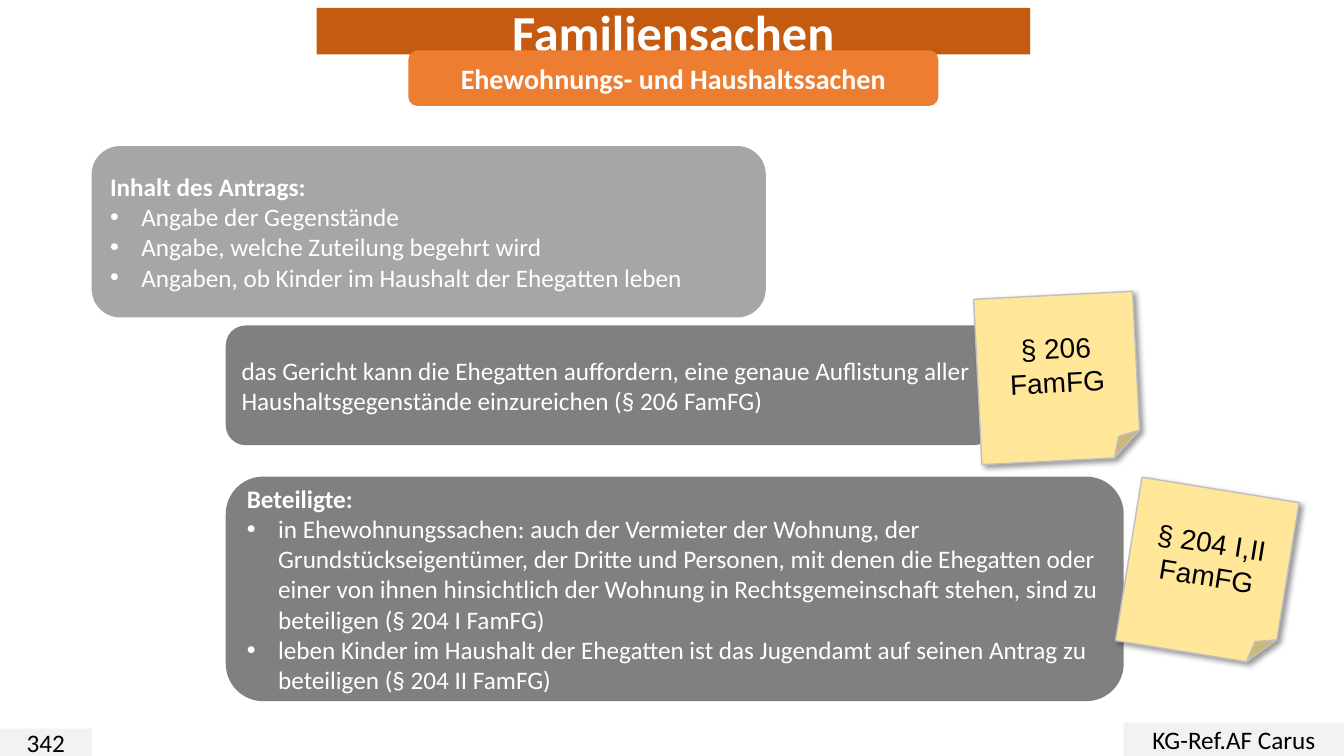
"""Build the slide on matters of the marital home and household."""
from dataclasses import dataclass
from typing import Optional

from lxml.etree import SubElement as Sub
from pptx import Presentation
from pptx.dml.color import RGBColor as Rgb
from pptx.dml.fill import FillFormat as Fill
from pptx.enum.shapes import MSO_SHAPE as Form
from pptx.enum.text import MSO_ANCHOR as Anchor, MSO_AUTO_SIZE as Auto, PP_ALIGN as Align
from pptx.oxml import parse_xml as to_xml
from pptx.oxml.ns import nsdecls, qn
from pptx.shapes.autoshape import Shape
from pptx.slide import Slide
from pptx.text.text import _Paragraph as Para
from pptx.util import Cm, Pt

WHITE, BLACK = "FFFFFF", "000000"
INDENT = Cm(0.79)


@dataclass
class Card:
    x: float
    y: float
    w: float
    h: float
    fill: str
    lines: tuple[str, ...]
    size: int = 18
    ink: str = WHITE
    bold: bool = False
    align: Align = Align.CENTER
    form: Form = Form.ROUNDED_RECTANGLE
    slot: Optional[int] = None


@dataclass
class Note:
    x: float
    y: float
    turn: float
    law: str


CARDS = (
    Card(7.98, 0.2, 17.98, 1.17, "C55A11", ("Familiensachen",), 36, bold=True, slot=0),
    Card(0, 18.36, 2.31, 0.69, "F2F2F2", ("342",), ink=BLACK, form=Form.RECTANGLE),
    Card(28.32, 18.21, 5.55, 0.84, "F2F2F2", ("KG-Ref.AF Carus",), ink=BLACK, form=Form.RECTANGLE),
    Card(10.29, 1.27, 13.36, 1.4, "ED7D31", ("Ehewohnungs- und Haushaltssachen",), 20, bold=True),
    Card(2.31, 3.68, 16.99, 4.32, "A6A6A6", (
        "Inhalt des Antrags:",
        "Angabe der Gegenstände",
        "Angabe, welche Zuteilung begehrt wird",
        "Angaben, ob Kinder im Haushalt der Ehegatten leben",
    ), bold=True, align=Align.LEFT, slot=1),
    Card(5.69, 8.2, 19.35, 3.02, "808080", (
        "das Gericht kann die Ehegatten auffordern, eine genaue Auflistung aller "
        "Haushaltsgegenstände einzureichen (§ 206 FamFG)",
    ), align=Align.LEFT),
    Card(5.69, 12.01, 22.63, 5.66, "808080", (
        "Beteiligte:",
        "in Ehewohnungssachen: auch der Vermieter der Wohnung, der Grundstückseigentümer, "
        "der Dritte und Personen, mit denen die Ehegatten oder einer von ihnen hinsichtlich "
        "der Wohnung in Rechtsgemeinschaft stehen, sind zu beteiligen (§ 204 I FamFG)",
        "leben Kinder im Haushalt der Ehegatten ist das Jugendamt auf seinen Antrag zu "
        "beteiligen (§ 204 II FamFG)",
    ), bold=True, align=Align.LEFT, slot=2),
)
NOTES = (
    Note(24.64, 7.44, -2.9, "§ 206"),
    Note(28.42, 12.32, 9.2, "§ 204 I,II"),
)


def paint(fill: Fill, tone: str) -> None:
    fill.solid()
    fill.fore_color.rgb = Rgb.from_string(tone)


def mark(para: Para, dot: bool) -> None:
    props = para._p.get_or_add_pPr()
    props.set("marL", str(INDENT if dot else 0))
    props.set("indent", str(-INDENT if dot else 0))
    if dot:
        Sub(props, qn("a:buFont")).set("typeface", "Arial")
        Sub(props, qn("a:buChar")).set("char", "•")
    else:
        Sub(props, qn("a:buNone"))


def write(shape: Shape, card: Card, font: str) -> None:
    frame = shape.text_frame
    frame.word_wrap = True
    frame.auto_size = Auto.NONE
    frame.vertical_anchor = Anchor.MIDDLE
    for row, line in enumerate(card.lines):
        para = frame.add_paragraph() if row else frame.paragraphs[0]
        para.alignment = card.align
        para.space_before = Pt(0)
        dot = bool(card.slot and row)
        mark(para, dot)
        run = para.add_run()
        run.text = line
        run.font.name = font
        run.font.size = Pt(card.size)
        run.font.bold = card.bold and not dot
        paint(run.font.fill, card.ink)


def draw(slide: Slide, card: Card, font: str = "Calibri") -> Shape:
    box = [Cm(side) for side in (card.x, card.y, card.w, card.h)]
    if card.slot is None:
        shape = slide.shapes.add_shape(card.form, *box)
    else:
        shape = slide.placeholders[card.slot]
        shape.left, shape.top, shape.width, shape.height = box
        shape._element.spPr.insert(1, to_xml(
            f'<a:prstGeom {nsdecls("a")} prst="roundRect"><a:avLst/></a:prstGeom>'))
    paint(shape.fill, card.fill)
    shape.line.fill.background()
    shape.shadow.inherit = False
    write(shape, card, font)
    return shape


def stick(slide: Slide, note: Note) -> None:
    card = Card(note.x, note.y, 4.01, 4.17, "FFE699", (note.law, "FamFG"),
                20, BLACK, form=Form.FOLDED_CORNER)
    shape = draw(slide, card, "Arial")
    shape.rotation = note.turn
    paint(shape.line.fill, "BFBFBF")
    shape.line.width = Pt(1)
    glow = shape._element.spPr.find(qn("a:effectLst"))
    glow.append(to_xml(
        f'<a:outerShdw {nsdecls("a")} blurRad="{Pt(4)}" dist="{Pt(3)}" dir="2700000" '
        f'algn="tl" rotWithShape="0"><a:srgbClr val="{BLACK}">'
        '<a:alpha val="40000"/></a:srgbClr></a:outerShdw>'))


def main() -> None:
    deck = Presentation()
    deck.slide_width, deck.slide_height = Cm(33.87), Cm(19.05)
    slide = deck.slides.add_slide(deck.slide_layouts.get_by_name("Two Content"))
    for card in CARDS:
        draw(slide, card)
    for note in NOTES:
        stick(slide, note)
    deck.save("out.pptx")


if __name__ == "__main__":
    main()
